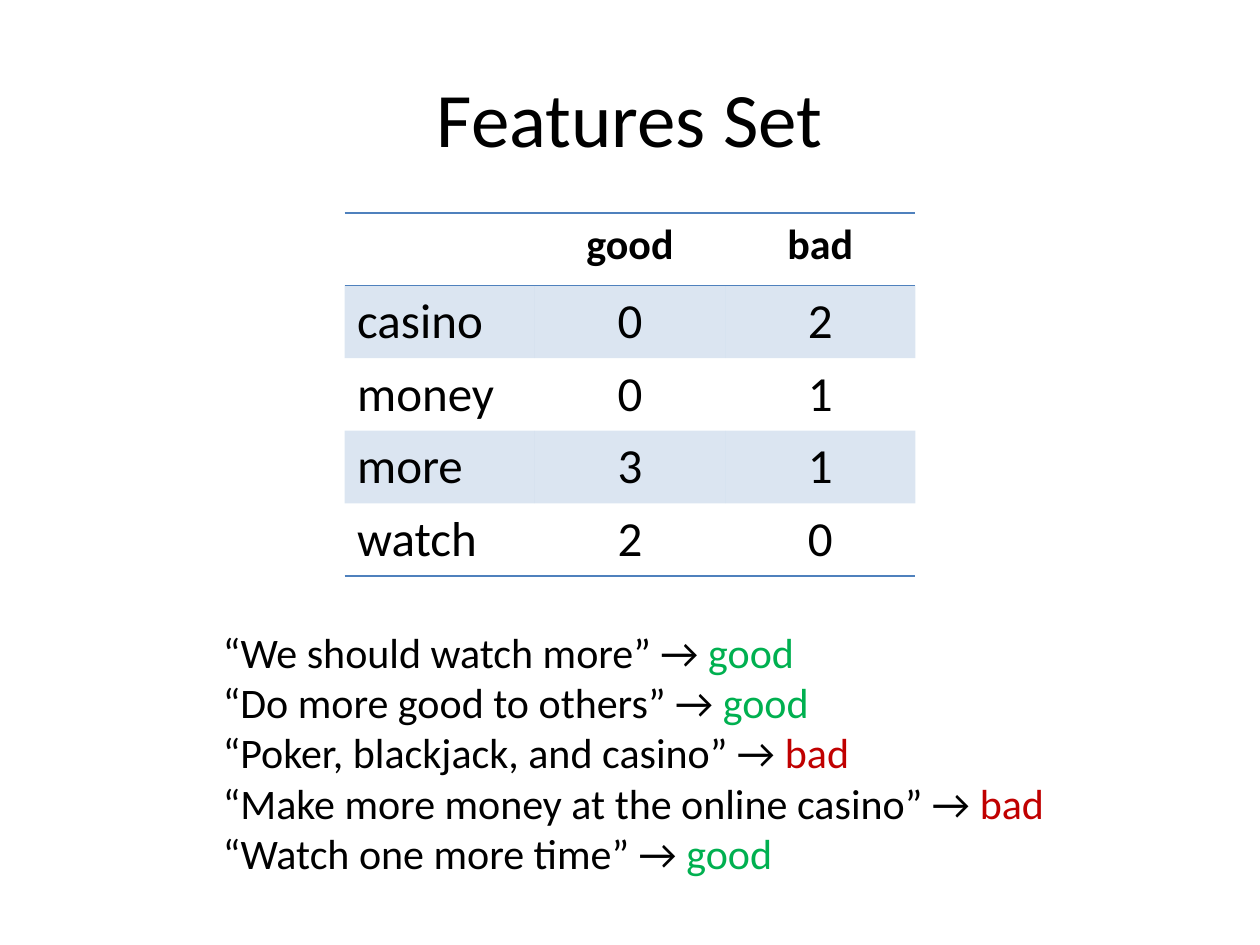
from lxml import etree
from pptx import Presentation
from pptx.dml.color import RGBColor
from pptx.enum.text import MSO_ANCHOR, MSO_AUTO_SIZE, PP_ALIGN
from pptx.oxml.ns import qn
from pptx.util import Inches, Pt

LEFT, CENTER = PP_ALIGN.LEFT, PP_ALIGN.CENTER
BLACK = RGBColor(0x00, 0x00, 0x00)
BLUE = RGBColor(0x4F, 0x81, 0xBD)
GREEN = RGBColor(0x00, 0xB0, 0x50)
RED = RGBColor(0xC0, 0x00, 0x00)
FONT = "Calibri"
PLAIN_TABLE_STYLE = "{2D5ABB26-0587-4C30-8999-92F81FD0307C}"

# Content
TITLE = "Features Set"
WORD_COUNTS = [
    ("", "good", "bad"),
    ("casino", "0", "2"),
    ("money", "0", "1"),
    ("more", "3", "1"),
    ("watch", "2", "0"),
]
SENTENCES = [
    ("We should watch more", "good"),
    ("Do more good to others", "good"),
    ("Poker, blackjack, and casino", "bad"),
    ("Make more money at the online casino", "bad"),
    ("Watch one more time", "good"),
]
LABEL_COLORS = {"good": GREEN, "bad": RED}

# Grid of the table, in inches
COLUMN, ROW = 1.51, 0.576
TABLE_TOP = 1.69


def add_run(paragraph, text, size, color=BLACK, bold=False):
    run = paragraph.add_run()
    run.text = text
    run.font.name, run.font.size, run.font.bold = FONT, Pt(size), bold
    run.font.color.rgb = color


def add_rules(cell, sides):
    """Draw 1 pt rules on the given sides, placed ahead of the cell's fill."""
    properties = cell._tc.get_or_add_tcPr()
    for position, side in enumerate(sides):
        line = etree.Element(qn(f"a:ln{side}"), w=str(Pt(1)))
        fill = etree.SubElement(line, qn("a:solidFill"))
        etree.SubElement(fill, qn("a:srgbClr"), val=str(BLUE))
        properties.insert(position, line)


def tint(cell):
    cell.fill.solid()
    cell.fill.fore_color.rgb = BLUE
    color = cell._tc.tcPr.find(".//" + qn("a:srgbClr"))
    etree.SubElement(color, qn("a:alpha"), val="20000")


prs = Presentation()
prs.slide_width, prs.slide_height = Inches(10), Inches(7.5)
slide = prs.slides.add_slide(prs.slide_layouts[5])

# Title
title = slide.shapes.title
title.left, title.top = Inches(0.5), Inches(0.3)
title.width, title.height = Inches(9), Inches(1.25)
title.text_frame.vertical_anchor = MSO_ANCHOR.MIDDLE
heading = title.text_frame.paragraphs[0]
heading.alignment = CENTER
add_run(heading, TITLE, 44)

# Word counts, centred on the slide
row_count, column_count = len(WORD_COUNTS), len(WORD_COUNTS[0])
table_width = Inches(COLUMN * column_count)
counts = slide.shapes.add_table(
    row_count, column_count, (prs.slide_width - table_width) // 2,
    Inches(TABLE_TOP), table_width, Inches(ROW * row_count)).table
counts._tbl.tblPr.find(qn("a:tableStyleId")).text = PLAIN_TABLE_STYLE

for r, words in enumerate(WORD_COUNTS):
    header = r == 0
    rules = "TB" if header else "B" if r == row_count - 1 else ""
    for c, word in enumerate(words):
        cell = counts.cell(r, c)
        if r % 2:
            tint(cell)
        else:
            cell.fill.background()
        add_rules(cell, rules)
        if word:
            paragraph = cell.text_frame.paragraphs[0]
            paragraph.alignment = CENTER if c else LEFT
            add_run(paragraph, word, 24 if header else 28, bold=header)

# Classified sentences
examples = slide.shapes.add_textbox(
    Inches(1.67), Inches(4.92), Inches(6.92), Inches(2.12)).text_frame
examples.word_wrap = True
examples.auto_size = MSO_AUTO_SIZE.SHAPE_TO_FIT_TEXT
for i, (sentence, label) in enumerate(SENTENCES):
    paragraph = examples.add_paragraph() if i else examples.paragraphs[0]
    add_run(paragraph, f"“{sentence}” → ", 24)
    add_run(paragraph, label, 24, LABEL_COLORS[label])

prs.save("out.pptx")
